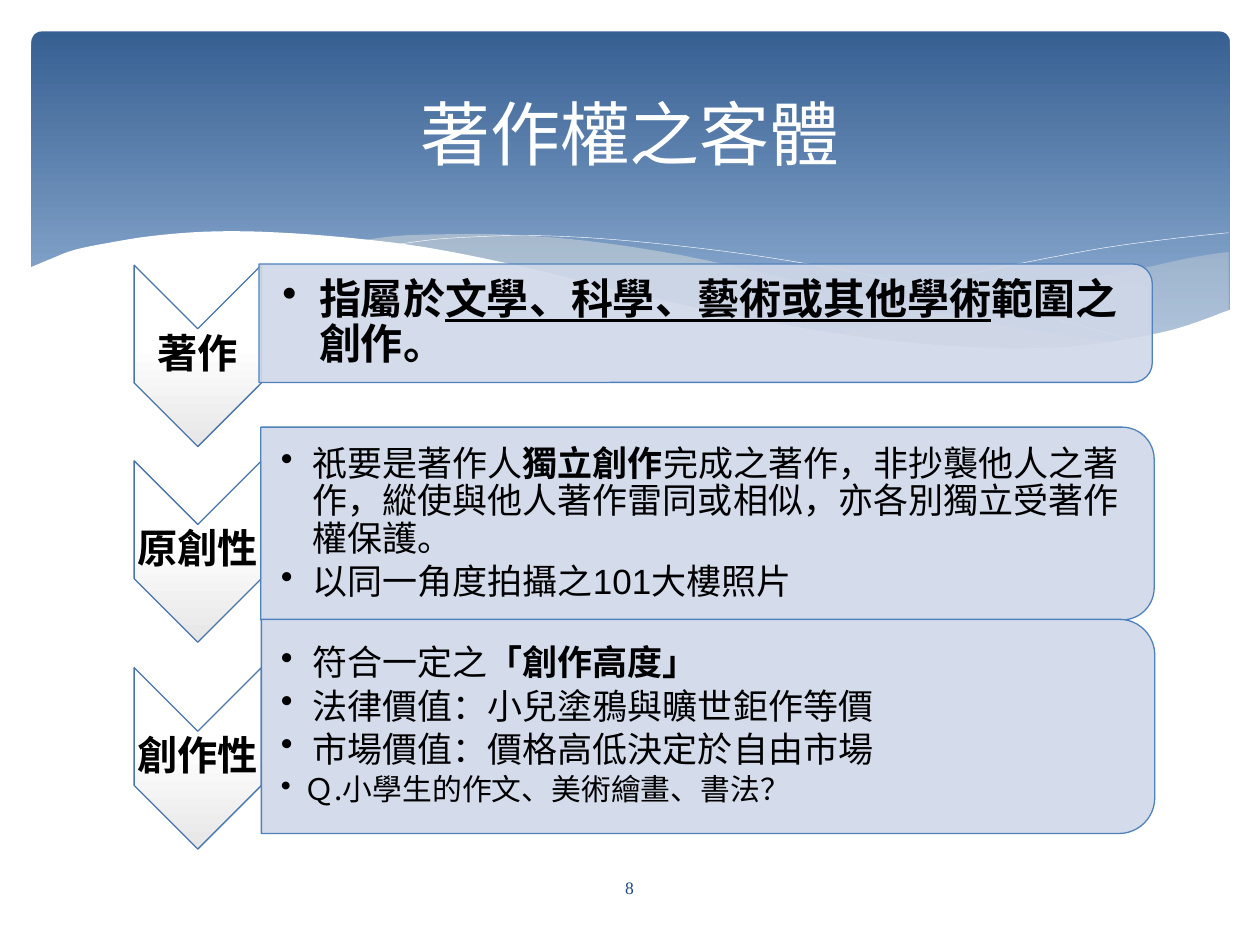
from lxml import etree
from pptx import Presentation
from pptx.dml.color import RGBColor
from pptx.enum.shapes import MSO_SHAPE
from pptx.enum.text import MSO_ANCHOR, PP_ALIGN
from pptx.oxml.ns import qn
from pptx.util import Pt

CHEVRON = MSO_SHAPE.CHEVRON
PANEL = MSO_SHAPE.ROUND_2_SAME_RECTANGLE
BANNER = MSO_SHAPE.ROUNDED_RECTANGLE
MIDDLE = MSO_ANCHOR.MIDDLE
CENTER, LEFT = PP_ALIGN.CENTER, PP_ALIGN.LEFT
CJK = "Noto Sans CJK SC"
CHEVRON_CENTER = 113

# Each outline is a list of smooth curves, joined at corners.
RIGHT_SWELL = [
    [(702, 144), (682, 147), (652, 153.5), (615, 161), (561, 175), (525, 182), (476, 191)],
    [(476, 191), (517, 197), (562, 199.5), (608, 199.5), (652, 194), (683, 185), (702, 178)],
]
LONG_SWELL = [
    [(206, 137.5), (225, 135), (248, 134), (287, 134), (334, 137.5), (390, 146),
     (453, 160), (508, 173), (558, 183), (603, 191), (643, 196.5)],
    [(643, 196.5), (617, 199.5), (581, 201), (548, 199.5), (500, 194), (433, 183.5),
     (353, 167), (307, 156), (261, 146), (206, 137.5)],
]
LONG_STROKE = [[(222.5, 140.4), (247, 137), (269, 135.5), (300, 134.6), (338, 136),
                (383, 140), (438, 147), (500, 158), (572, 174), (653, 196)]]
RIGHT_STROKE = [[(441, 185), (500, 169), (559, 155.5), (623, 143), (665, 137), (702, 133)]]
WHITE_WAVE = [
    [(703, 177), (670, 188.5), (630, 196), (593, 199), (548, 198), (495, 193),
     (434, 183), (362, 168), (301, 153), (244, 141.5), (195, 135.5), (150, 132.5),
     (116, 132.5), (86, 135), (61, 139), (42, 143), (29, 148), (17, 153)],
    [(17, 237), (17, 237)],
    [(703, 237), (703, 237)],
]

# A span is its text and the format values that differ from the paragraph's.
BOLD = {"bold": True}
ROWS = [
    {"label": "著作", "middle": 203.4,
     "panel": (403.2, 184.7, 67.7), "text": (147.6, 154.1, 507.6, 61.2), "inset": 13.7,
     "paras": [(24, 21, [("指屬於", BOLD),
                         ("文學、科學、藝術或其他學術", {"bold": True, "underline": True}),
                         ("範圍之創作。", BOLD)])]},
    {"label": "原創性", "middle": 315.2,
     "panel": (404.3, 299.2, 110.2), "text": (149, 249.8, 505.4, 99.4), "inset": 11.5,
     "paras": [(20, 18, [("祇要是著作人", {}), ("獨立創作", BOLD),
                         ("完成之著作，非抄襲他人之著作，縱使與他人著作雷同或相似，"
                          "亦各別獨立受著作權保護。", {})]),
               (20, 18, [("以同一角度拍攝之101大樓照片", {"name": "Arial"})])]},
    {"label": "創作性", "middle": 433.4,
     "panel": (404.6, 415.1, 122.4), "text": (149, 360, 504.7, 110.2), "inset": 11.5,
     "paras": [(20, 18, [("符合一定之", {}), ("「創作高度」", BOLD)]),
               (20, 18, [("法律價值：小兒塗鴉與曠世鉅作等價", {})]),
               (20, 18, [("市場價值：價格高低決定於自由市場", {})]),
               (17, 13.7, [("Ｑ.小學生的作文、美術繪畫、書法？", {})])]},
]


def color(value):
    return RGBColor.from_string(value)


def set_values(target, values):
    for name, value in values.items():
        setattr(target, name, value)


def paint(shape, fill=None, opacity=100, line=None, width=0.75):
    shape.shadow.inherit = False
    if fill:
        shape.fill.solid()
        shape.fill.fore_color.rgb = color(fill)
        tone = shape._element.spPr.find(qn("a:solidFill"))[0]
        etree.SubElement(tone, qn("a:alpha"), val=str(opacity * 1000))
    else:
        shape.fill.background()
    if line:
        shape.line.color.rgb = color(line)
        shape.line.width = Pt(width)
    else:
        shape.line.fill.background()


def paint_gradient(shape, stops):
    """Fill from top to bottom of the page, whatever the rotation of the shape."""
    shape.fill.gradient()
    shape.fill.gradient_angle = 270
    for stop, (position, value) in zip(shape.fill.gradient_stops, stops):
        stop.position = position
        stop.color.rgb = color(value)
    shape._element.spPr.find(qn("a:gradFill")).set("rotWithShape", "0")


def smooth(knots, steps=5):
    """Points of a Catmull-Rom curve through the knots."""
    padded = [knots[0], *knots, knots[-1]]
    points = [knots[0]]
    for a, b, c, d in zip(padded, padded[1:], padded[2:], padded[3:]):
        for step in range(1, steps + 1):
            t = step / steps
            points.append(tuple(
                q + t / 2 * (r - p + t * (2 * p - 5 * q + 4 * r - s + t * (3 * (q - r) + s - p)))
                for p, q, r, s in zip(a, b, c, d)))
    return points


def add_wave(page, curves, closed=True, **look):
    points = [(Pt(x), Pt(y)) for knots in curves for x, y in smooth(knots)]
    builder = page.shapes.build_freeform(*points[0])
    builder.add_line_segments(points[1:], close=closed)
    paint(builder.convert_to_shape(), **look)


def add_turned(page, kind, center, middle, width, height):
    """Add a preset shape, turned clockwise, that takes up width by height on the page."""
    shape = page.shapes.add_shape(kind, Pt(center - height / 2), Pt(middle - width / 2),
                                  Pt(height), Pt(width))
    shape.rotation = 90
    return shape


def add_box(page, left, top, width, height, inset=1.4, margin=1.4):
    box = page.shapes.add_textbox(Pt(left), Pt(top), Pt(width), Pt(height))
    set_values(box.text_frame, {
        "word_wrap": True, "vertical_anchor": MIDDLE, "margin_left": Pt(inset),
        "margin_right": Pt(margin), "margin_top": Pt(margin), "margin_bottom": Pt(margin)})
    return box


def add_span(para, text, size, tone="000000", **values):
    span = para.add_run()
    span.text = text
    set_values(span.font, {"name": CJK, "size": Pt(size), **values})
    span.font.color.rgb = color(tone)
    latin = span._r.rPr.find(qn("a:latin"))
    east_asian = etree.Element(qn("a:ea"), typeface=CJK)
    latin.addnext(east_asian)


def add_bullet(para, indent):
    properties = para._p.get_or_add_pPr()
    properties.set("marL", str(Pt(indent)))
    properties.set("indent", str(-Pt(indent)))
    etree.SubElement(properties, qn("a:buChar"), char="•")


def add_row(page, row):
    middle = row["middle"]
    chevron = add_turned(page, CHEVRON, CHEVRON_CENTER, middle, 72.7, 103.7)
    paint(chevron, line="4875AC")
    paint_gradient(chevron, [(0.44, "FFFFFF"), (1, "E6E6E6")])

    label = add_box(page, CHEVRON_CENTER - 36.4, middle - 16, 72.7, 31).text_frame.paragraphs[0]
    set_values(label, {"alignment": CENTER, "line_spacing": 0.9, "space_after": Pt(8)})
    add_span(label, row["label"], 23, bold=True)

    center, panel_middle, height = row["panel"]
    panel = add_turned(page, PANEL, center, panel_middle, 510.5, height)
    paint(panel, "D0D8E8", 90, "4F81BD")

    frame = add_box(page, *row["text"], inset=row["inset"], margin=1).text_frame
    for number, (size, indent, spans) in enumerate(row["paras"]):
        para = frame.add_paragraph() if number else frame.paragraphs[0]
        set_values(para, {"level": 1, "alignment": LEFT, "line_spacing": 0.9,
                          "space_after": Pt(size * 0.15)})
        add_bullet(para, indent)
        for text, values in spans:
            add_span(para, text, size, **values)


def add_banner(page):
    banner = page.shapes.add_shape(BANNER, Pt(18), Pt(18), Pt(684.7), Pt(194.4))
    banner.adjustments[0] = 0.03
    paint(banner)
    paint_gradient(banner, [(0, "376092"), (0.9, "95B3D7")])
    add_wave(page, RIGHT_SWELL, fill="EEECE1", opacity=29)
    add_wave(page, LONG_SWELL, fill="EEECE1", opacity=40)
    for stroke in (LONG_STROKE, RIGHT_STROKE):
        add_wave(page, stroke, closed=False, line="FFFFFF", width=0.25)
    add_wave(page, WHITE_WAVE, fill="FFFFFF")


def set_title(page, text):
    title = page.shapes.title
    set_values(title, {"left": Pt(36), "top": Pt(26.6), "width": Pt(648), "height": Pt(98.6)})
    title.text_frame.vertical_anchor = MIDDLE
    para = title.text_frame.paragraphs[0]
    para.alignment = CENTER
    add_span(para, text, 40, "FFFFFF")
    page.shapes._spTree.append(title._element)  # in front of the banner


def add_page_number(page, text):
    para = add_box(page, 314, 492.5, 91.4, 28.8).text_frame.paragraphs[0]
    para.alignment = CENTER
    add_span(para, text, 10, "1F497D", name="Times New Roman")


def main():
    deck = Presentation()
    deck.slide_width, deck.slide_height = Pt(720), Pt(540)
    page = deck.slides.add_slide(deck.slide_layouts[5])
    add_banner(page)
    for row in ROWS:
        add_row(page, row)
    add_page_number(page, "8")
    set_title(page, "著作權之客體")
    deck.save("out.pptx")


if __name__ == "__main__":
    main()
